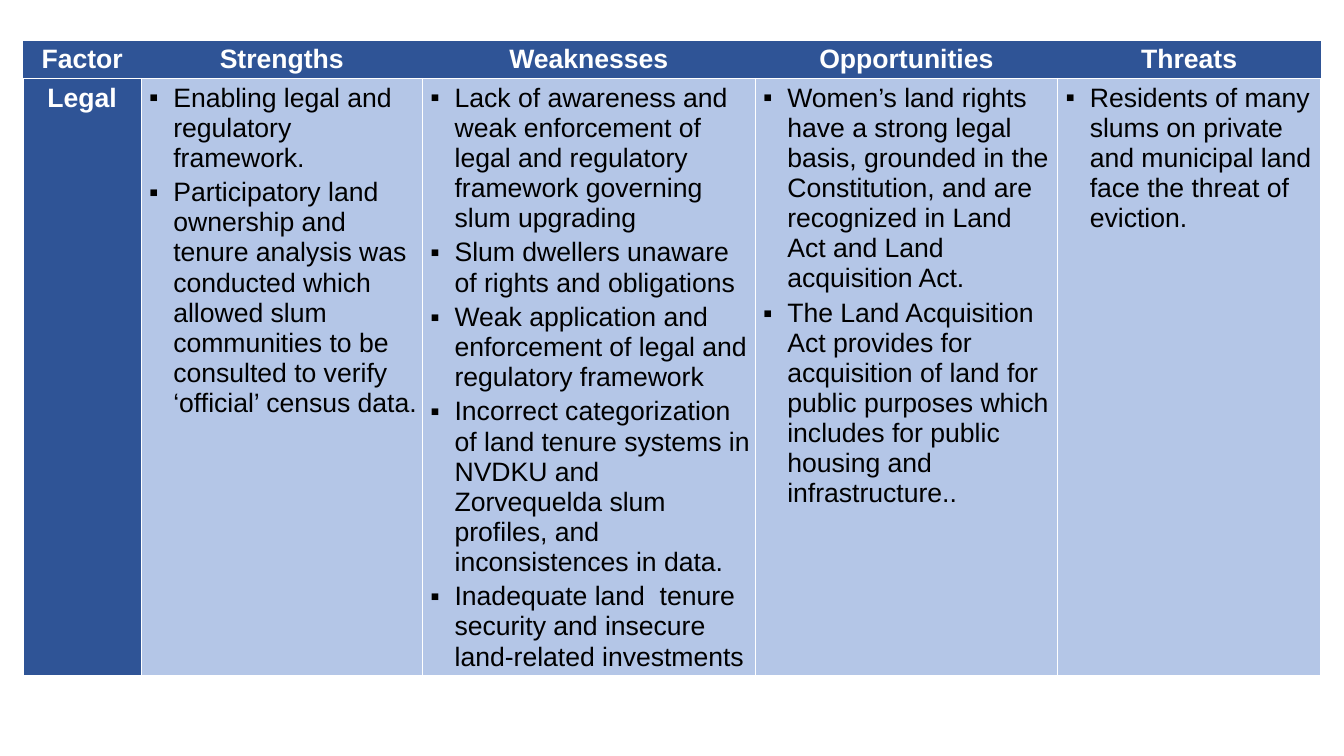
from lxml import etree
from pptx import Presentation
from pptx.dml.color import RGBColor
from pptx.enum.text import MSO_ANCHOR, PP_ALIGN
from pptx.oxml.ns import qn
from pptx.util import Inches, Pt

# Content: header and one list of points per column
HEADS = ["Factor", "Strengths", "Weaknesses", "Opportunities", "Threats"]
FACTOR = "Legal"
POINTS = [
    ["Enabling legal and regulatory framework.",
     "Participatory land ownership and tenure analysis was conducted which "
     "allowed slum communities to be consulted to verify ‘official’ census data."],
    ["Lack of awareness and weak enforcement of legal and regulatory "
     "framework governing slum upgrading",
     "Slum dwellers unaware of rights and obligations",
     "Weak application and enforcement of legal and regulatory framework",
     "Incorrect categorization of land tenure systems in NVDKU and Zorvequelda "
     "slum profiles, and inconsistences in data.",
     "Inadequate land  tenure security and insecure land-related investments"],
    ["Women’s land rights have a strong legal basis, grounded in the "
     "Constitution, and are recognized in Land Act and Land acquisition Act.",
     "The Land Acquisition Act provides for acquisition of land for public "
     "purposes which includes for public housing and infrastructure.."],
    ["Residents of many slums on private and municipal land face the threat "
     "of eviction."],
]

# Format
WIDTHS = [1.17, 2.79, 3.3, 3, 2.61]
HEIGHTS = [0.29, 4.33]
NAVY = RGBColor(0x2F, 0x54, 0x96)
PALE = RGBColor(0xB4, 0xC6, 0xE7)
WHITE = RGBColor(0xFF, 0xFF, 0xFF)
BLACK = RGBColor(0, 0, 0)
CENTER, LEFT = PP_ALIGN.CENTER, PP_ALIGN.LEFT
TOP, MIDDLE = MSO_ANCHOR.TOP, MSO_ANCHOR.MIDDLE


def add_edges(cell, sides):
    """Draw white borders, on the sides too if asked, ahead of the fill."""
    props = cell._tc.get_or_add_tcPr()
    for spot, edge in enumerate(("lnL", "lnR", "lnT", "lnB")):
        line = etree.Element(qn(f"a:{edge}"), w=str(Pt(1)))
        if sides or edge in ("lnT", "lnB"):
            fill = etree.SubElement(line, qn("a:solidFill"))
            etree.SubElement(fill, qn("a:srgbClr"), val=str(WHITE))
        else:
            etree.SubElement(line, qn("a:noFill"))
        props.insert(spot, line)


def fill_cell(cell, texts, fill=NAVY, color=WHITE, bold=True, align=CENTER,
              anchor=TOP, after=3, margin=0, indent=0, bullet=None,
              sides=True):
    cell.fill.solid()
    cell.fill.fore_color.rgb = fill
    cell.vertical_anchor = anchor
    cell.margin_left = cell.margin_right = Inches(0.04)
    cell.margin_top = cell.margin_bottom = Inches(0.04)
    add_edges(cell, sides)
    frame = cell.text_frame
    for i, text in enumerate(texts):
        para = frame.paragraphs[0] if i == 0 else frame.add_paragraph()
        para.alignment = align
        para.line_spacing = 1.02
        para.space_after = Pt(after)
        props = para._p.get_or_add_pPr()
        props.set("marL", str(Inches(margin)))
        props.set("indent", str(Inches(indent)))
        if bullet:
            etree.SubElement(props, qn("a:buFont"), typeface="Arial")
            etree.SubElement(props, qn("a:buChar"), char=bullet)
        run = para.add_run()
        run.text = text
        font = run.font
        font.name, font.size, font.bold = "Arial", Pt(19), bold
        font.color.rgb = color


# Slide and table
deck = Presentation()
deck.slide_width, deck.slide_height = Inches(13.33), Inches(7.5)
slide = deck.slides.add_slide(deck.slide_layouts[6])
table = slide.shapes.add_table(
    len(HEIGHTS), len(WIDTHS), Inches(0.23), Inches(0.4),
    Inches(sum(WIDTHS)), Inches(sum(HEIGHTS))).table
for col, width in zip(table.columns, WIDTHS):
    col.width = Inches(width)
for row, height in zip(table.rows, HEIGHTS):
    row.height = Inches(height)

# Factor column
fill_cell(table.cell(0, 0), [HEADS[0]], after=8, sides=False)
fill_cell(table.cell(1, 0), [FACTOR], after=8)

# Strengths to threats
for col, (head, points) in enumerate(zip(HEADS[1:], POINTS), start=1):
    fill_cell(table.cell(0, col), [head], anchor=MIDDLE,
              margin=0.14, indent=-0.2, sides=False)
    fill_cell(table.cell(1, col), points, fill=PALE, color=BLACK, bold=False,
              align=LEFT, margin=0.28, indent=-0.24, bullet="▪")

deck.save("out.pptx")
